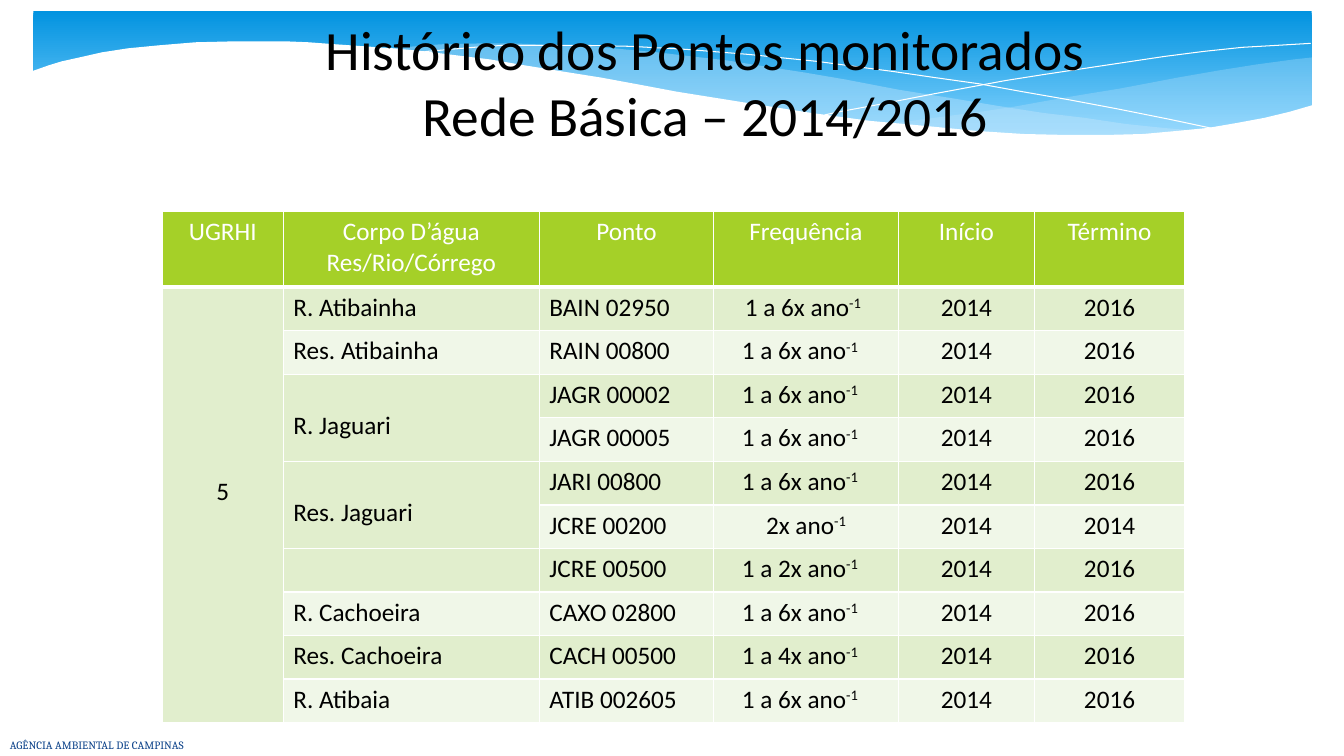
"""Build the slide on the monitored points of the basic network, 2014/2016."""
from lxml import etree
from pptx import Presentation
from pptx.dml.color import RGBColor
from pptx.enum.shapes import MSO_SHAPE
from pptx.enum.text import MSO_ANCHOR, PP_ALIGN
from pptx.oxml import parse_xml
from pptx.oxml.ns import nsdecls, qn
from pptx.util import Inches, Pt

ROUNDED = MSO_SHAPE.ROUNDED_RECTANGLE
MIDDLE = MSO_ANCHOR.MIDDLE
CENTER, LEFT = PP_ALIGN.CENTER, PP_ALIGN.LEFT

BLACK = RGBColor(0x00, 0x00, 0x00)
WHITE = RGBColor(0xFF, 0xFF, 0xFF)
DEEP_BLUE = RGBColor(0x02, 0x93, 0xE0)
SKY_BLUE = RGBColor(0x83, 0xD3, 0xFE)
PALE_BLUE = RGBColor(0xC6, 0xE7, 0xFC)
NAVY = RGBColor(0x07, 0x3E, 0x87)
GREEN = RGBColor(0xA5, 0xD0, 0x28)
LIGHT_GREEN = RGBColor(0xE1, 0xEE, 0xCD)
PALE_GREEN = RGBColor(0xF0, 0xF7, 0xE8)

HUNDREDTH = Inches(0.01)
LINE_HEIGHT = 0.305
CELL_MARGIN = 0.05


def add_run(paragraph, text, size, color, font="Calibri"):
    run = paragraph.add_run()
    run.text = text
    run.font.size = Pt(size)
    run.font.name = font
    run.font.bold = False
    run.font.color.rgb = color
    return run


def add_curve(shapes, points, close):
    builder = shapes.build_freeform(*points[0], scale=HUNDREDTH)
    builder.add_line_segments(points[1:], close=close)
    shape = builder.convert_to_shape()
    shape.shadow.inherit = False
    return shape


presentation = Presentation()
presentation.slide_width = Inches(13.33)
presentation.slide_height = Inches(7.5)
slide = presentation.slides.add_slide(presentation.slide_layouts[5])
shapes = slide.shapes

banner = shapes.add_shape(ROUNDED, Inches(0.33), Inches(0.11), Inches(12.68), Inches(1.36))
banner.adjustments[0] = 0
banner.shadow.inherit = False
banner.line.fill.background()
banner.fill.gradient()
banner.fill.gradient_angle = 270
for stop, color, position in zip(banner.fill.gradient_stops, (DEEP_BLUE, SKY_BLUE), (0, 0.9)):
    stop.color.rgb = color
    stop.position = position

right_wave = [
    (1301, 57), (1283, 59), (1246, 64), (1208, 70), (1168, 77), (1147, 81),
    (1110, 88), (1073, 94), (1038, 100), (1005, 106), (972, 111), (941, 115),
    (911, 119), (882, 123), (921, 127), (958, 130), (993, 132), (1025, 134),
    (1056, 135), (1113, 135), (1151, 133), (1186, 129), (1218, 125), (1247, 119),
    (1266, 115), (1284, 110), (1301, 105)]
middle_wave = [
    (1190, 130), (1154, 127), (1116, 123), (1076, 117), (1034, 112), (989, 105),
    (941, 97), (891, 89), (839, 79), (798, 72), (759, 66), (721, 60), (686, 56),
    (652, 52), (619, 49), (589, 46), (560, 45), (532, 44), (506, 43), (482, 43),
    (437, 44), (399, 47), (382, 49), (431, 54), (483, 60), (539, 69), (599, 79),
    (654, 89), (706, 98), (755, 106), (802, 113), (846, 119), (887, 124), (926, 128),
    (963, 131), (998, 133), (1030, 135), (1061, 136), (1118, 136), (1156, 133), (1179, 131)]
falling_line = [
    (412, 53), (424, 51), (447, 49), (470, 47), (499, 45), (535, 45), (577, 45),
    (625, 46), (680, 49), (742, 54), (811, 61), (848, 66), (886, 71), (927, 77),
    (970, 83), (1014, 91), (1060, 99), (1108, 108), (1158, 118), (1210, 129)]
rising_line = [
    (818, 114), (832, 111), (870, 104), (927, 93), (997, 80), (1035, 74), (1075, 68),
    (1115, 62), (1155, 56), (1194, 51), (1232, 47), (1267, 45), (1300, 43)]
white_wave = [
    (1303, 104), (1279, 111), (1254, 117), (1227, 122), (1198, 127), (1167, 130),
    (1134, 133), (1097, 134), (1058, 134), (1015, 133), (969, 130), (918, 125),
    (863, 120), (804, 112), (740, 102), (671, 91), (634, 84), (596, 77), (558, 71),
    (521, 65), (486, 59), (453, 55), (421, 51), (390, 48), (361, 46), (333, 44),
    (306, 42), (282, 41), (235, 41), (194, 42), (158, 45), (127, 48), (101, 52),
    (79, 57), (61, 61), (48, 65), (31, 71), (31, 187), (1303, 187)]

for points, opacity in ((right_wave, 29), (middle_wave, 40)):
    wave = add_curve(shapes, points, True)
    wave.line.fill.background()
    wave.fill.solid()
    wave.fill.fore_color.rgb = PALE_BLUE
    wave_color = wave.element.spPr.find(qn("a:solidFill"))[0]
    etree.SubElement(wave_color, qn("a:alpha"), val=str(opacity * 1000))

for points in (falling_line, rising_line):
    curve = add_curve(shapes, points, False)
    curve.fill.background()
    curve.line.color.rgb = WHITE
    curve.line.width = Pt(0)

foreground = add_curve(shapes, white_wave, True)
foreground.line.fill.background()
foreground.fill.solid()
foreground.fill.fore_color.rgb = WHITE

agency = shapes.add_textbox(0, Inches(7.19), Inches(5.52), Inches(0.4))
agency.text_frame.word_wrap = True
agency.text_frame.vertical_anchor = MIDDLE
add_run(agency.text_frame.paragraphs[0], "AGÊNCIA AMBIENTAL DE CAMPINAS", 8, NAVY, "Cambria")

headers = ["UGRHI", "Corpo D’água\nRes/Rio/Córrego", "Ponto", "Frequência", "Início", "Término"]
records = [
    ("5", "R. Atibainha", "BAIN 02950", "1 a 6x ano", "2014", "2016"),
    ("", "Res. Atibainha", "RAIN 00800", "1 a 6x ano", "2014", "2016"),
    ("", "R. Jaguari", "JAGR 00002", "1 a 6x ano", "2014", "2016"),
    ("", "", "JAGR 00005", "1 a 6x ano", "2014", "2016"),
    ("", "Res. Jaguari", "JARI 00800", "1 a 6x ano", "2014", "2016"),
    ("", "", "JCRE 00200", "2x ano", "2014", "2014"),
    ("", "", "JCRE 00500", "1 a 2x ano", "2014", "2016"),
    ("", "R. Cachoeira", "CAXO 02800", "1 a 6x ano", "2014", "2016"),
    ("", "Res. Cachoeira", "CACH 00500", "1 a 4x ano", "2014", "2016"),
    ("", "R. Atibaia", "ATIB 002605", "1 a 6x ano", "2014", "2016")]
column_widths = [1.2, 2.54, 1.73, 1.83, 1.35, 1.49]
row_heights = [0.75] + [0.432] * len(records)
LEFT_COLUMNS = (1, 2)
FREQUENCY = 3
frequency_margins = {1: 0.16, 6: 0.1}

table = shapes.add_table(len(row_heights), len(headers), Inches(1.61), Inches(2.1),
                         Inches(sum(column_widths)), Inches(sum(row_heights))).table
table.first_row = False
table.horz_banding = False
for column, width in zip(table.columns, column_widths):
    column.width = Inches(width)
for row, height in zip(table.rows, row_heights):
    row.height = Inches(height)

for row_index, values in enumerate([headers] + records):
    is_header = row_index == 0
    for column_index, value in enumerate(values):
        cell = table.cell(row_index, column_index)
        properties = cell._tc.get_or_add_tcPr()
        for side in "LRTB":
            width = 3 if is_header and side == "B" else 1
            properties.append(parse_xml(
                f'<a:ln{side} {nsdecls("a")} w="{Pt(width)}"><a:solidFill>'
                f'<a:srgbClr val="{WHITE}"/></a:solidFill></a:ln{side}>'))
        cell.fill.solid()
        if is_header:
            cell.fill.fore_color.rgb = GREEN
        elif column_index == 0 or row_index % 2:
            cell.fill.fore_color.rgb = LIGHT_GREEN
        else:
            cell.fill.fore_color.rgb = PALE_GREEN
        frame = cell.text_frame
        for line_index, line in enumerate(value.split("\n") if value else []):
            paragraph = frame.add_paragraph() if line_index else frame.paragraphs[0]
            paragraph.alignment = LEFT if column_index in LEFT_COLUMNS and not is_header else CENTER
            add_run(paragraph, line, 18, WHITE if is_header else BLACK)
        if column_index == FREQUENCY and not is_header:
            exponent = add_run(frame.paragraphs[0], "-1", 18, BLACK)
            exponent._r.get_or_add_rPr().set("baseline", "30000")
            cell.margin_right = Inches(frequency_margins.get(row_index, 0.22))

for first_row, last_row, column_index, lines_above in ((1, 10, 0, 6), (3, 4, 1, 1), (5, 6, 1, 1)):
    merged = table.cell(first_row, column_index)
    merged.merge(table.cell(last_row, column_index))
    merged.margin_top = Inches(CELL_MARGIN + lines_above * LINE_HEIGHT)

title = shapes.title
title.left, title.top = Inches(0.37), Inches(0.08)
title.width, title.height = Inches(13.25), Inches(1.45)
title.text_frame.vertical_anchor = MIDDLE
heading = title.text_frame.paragraphs[0]
heading.alignment = CENTER
add_run(heading, "Histórico dos Pontos monitorados", 39.6, BLACK)
heading.add_line_break()
add_run(heading, "Rede Básica – 2014/2016", 39.6, BLACK)
shapes.element.append(title.element)

presentation.save("out.pptx")
